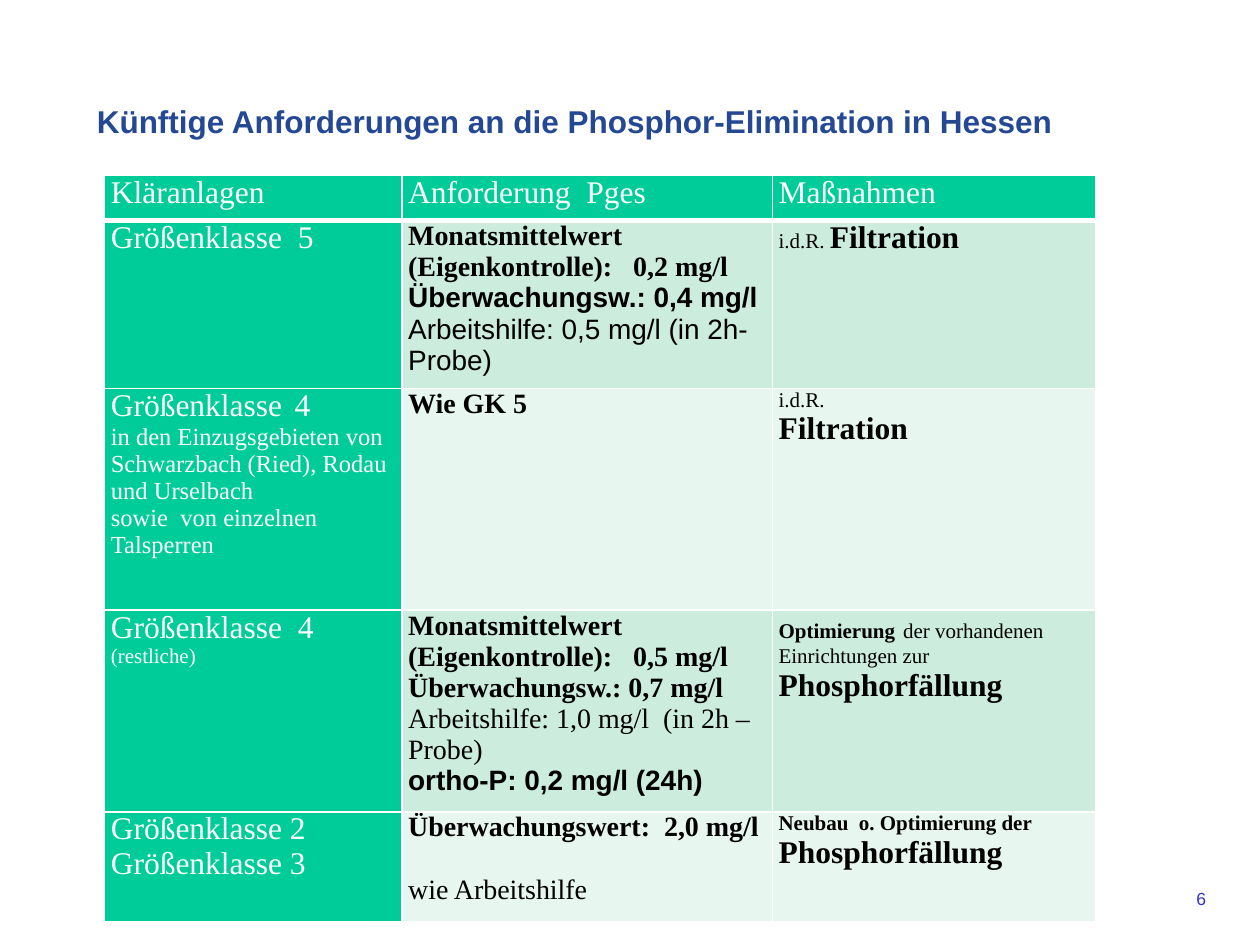
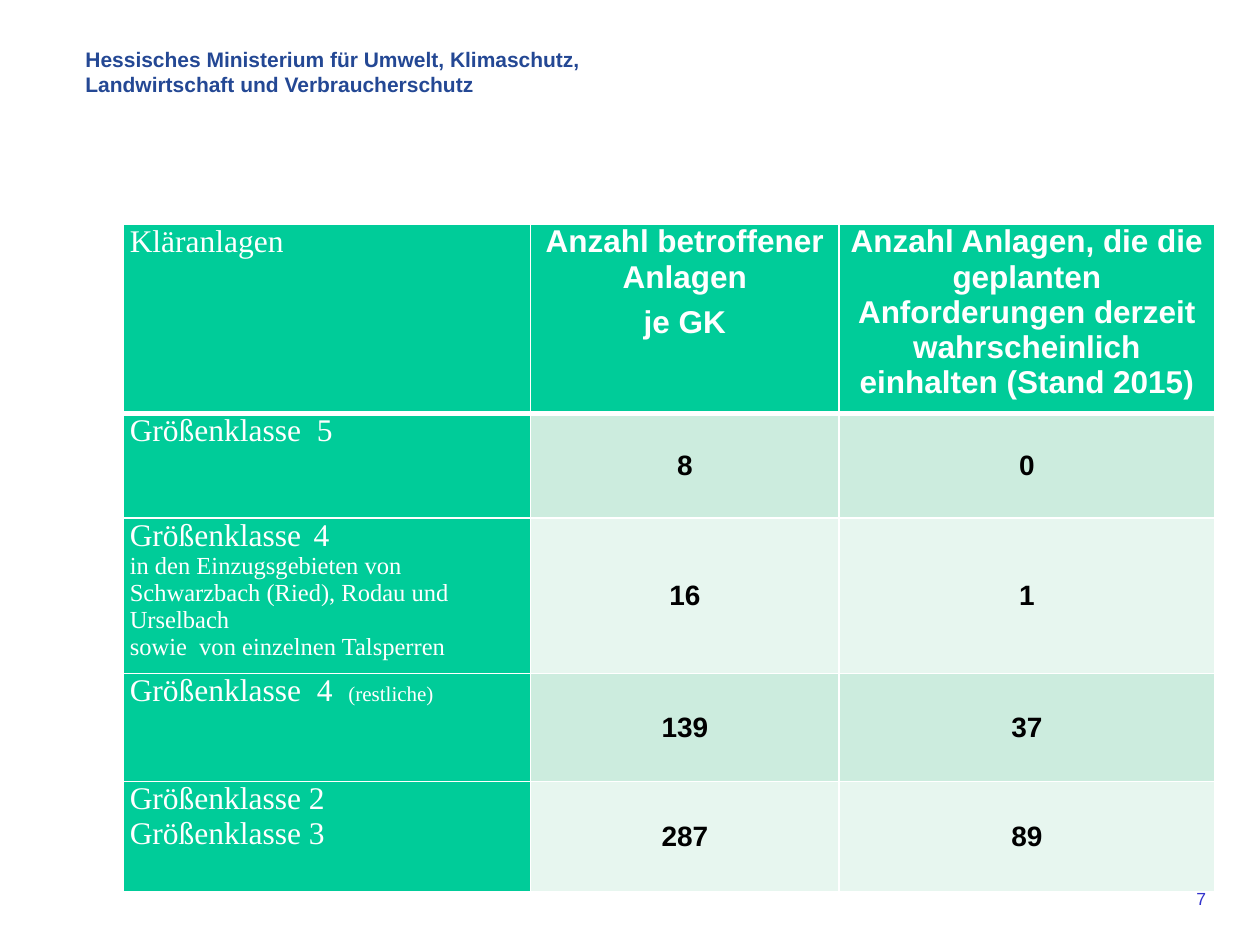
from pptx import Presentation
from pptx.dml.color import RGBColor
from pptx.enum.text import MSO_ANCHOR, PP_ALIGN
from pptx.oxml import parse_xml
from pptx.oxml.ns import nsdecls
from pptx.util import Inches, Pt

LEFT, CENTER, RIGHT = PP_ALIGN.LEFT, PP_ALIGN.CENTER, PP_ALIGN.RIGHT
TOP, MIDDLE = MSO_ANCHOR.TOP, MSO_ANCHOR.MIDDLE
SERIF, SANS = "Times New Roman", "Arial"
COLORS = {
    "title": "244894",
    "number": "3333CC",
    "green": "00CC99",
    "band_dark": "CCECDE",
    "band_light": "E7F6EF",
    "white": "FFFFFF",
    "black": "000000",
}
STYLES = {
    "label": (18, SERIF, False),
    "sublabel": (14, SERIF, False),
    "small": (12, SERIF, False),
    "small_bold": (12, SERIF, True),
    "measure": (18, SERIF, True),
    "value": (16, SERIF, True),
    "value_plain": (16, SERIF, False),
    "sans": (16, SANS, True),
    "sans_plain": (16, SANS, False),
    "sans_head": (18, SANS, True),
    "title": (18, SANS, True),
    "ministry": (12, SANS, True),
    "number": (10, SANS, False),
}


def write(frame, paragraphs, color, align=LEFT, gap=0):
    for index, runs in enumerate(paragraphs):
        paragraph = frame.add_paragraph() if index else frame.paragraphs[0]
        paragraph.alignment = align
        if index and gap:
            paragraph.space_before = Pt(gap)
        for text, style in runs:
            run = paragraph.add_run()
            run.text = text
            size, run.font.name, run.font.bold = STYLES[style]
            run.font.size = Pt(size)
            run.font.color.rgb = RGBColor.from_string(COLORS[color])


def add_text(slide, box, paragraphs, color, align=LEFT):
    frame = slide.shapes.add_textbox(*map(Inches, box)).text_frame
    frame.word_wrap = True
    write(frame, paragraphs, color, align)


plant_classes = [
    [[("Kläranlagen", "label")]],
    [[("Größenklasse  5", "label")]],
    [
        [("Größenklasse", "label"), ("  ", "sublabel"), ("4", "label")],
        [("in den Einzugsgebieten von Schwarzbach (Ried), Rodau und Urselbach", "sublabel")],
        [("sowie  von einzelnen Talsperren", "sublabel")],
    ],
    [[("Größenklasse  4  ", "label"), ("(restliche)", "small")]],
    [[("Größenklasse 2", "label")], [("Größenklasse 3", "label")]],
]
requirements = [
    [[("Anforderung  Pges", "label")]],
    [
        [("Monatsmittelwert  (Eigenkontrolle):   0,2 mg/l", "value")],
        [("Überwachungsw.: 0,4 mg/l  ", "sans"),
         ("Arbeitshilfe: 0,5 mg/l (in 2h- Probe)", "sans_plain")],
    ],
    [[("Wie GK 5", "value")]],
    [
        [("Monatsmittelwert  (Eigenkontrolle):   0,5 mg/l", "value")],
        [("Überwachungsw.: 0,7 mg/l", "value")],
        [("Arbeitshilfe: 1,0 mg/l  (in 2h – Probe)", "value_plain")],
        [("ortho-P: 0,2 mg/l (24h)", "sans")],
    ],
    [[("Überwachungswert:  2,0 mg/l", "value")], [("wie Arbeitshilfe", "value_plain")]],
]
measures = [
    [[("Maßnahmen", "label")]],
    [[("i.d.R. ", "small"), ("Filtration", "measure")]],
    [[("i.d.R.", "small")], [("Filtration", "measure")]],
    [[("Optimierung", "small_bold"), (" ", "label"),
      ("der vorhandenen Einrichtungen zur ", "small"), ("Phosphorfällung", "measure")]],
    [[("Neubau  o. Optimierung der ", "small_bold"), ("Phosphorfällung", "measure")]],
]
affected = [[[("Anzahl betroffener Anlagen", "sans_head")], [("je GK", "sans_head")]]]
affected += [[[(count, "sans")]] for count in ("8", "16", "139", "287")]
compliant = [[[("Anzahl Anlagen, die die geplanten Anforderungen derzeit "
                "wahrscheinlich einhalten (Stand 2015)", "sans_head")]]]
compliant += [[[(count, "sans")]] for count in ("0", "1", "37", "89")]

pages = [
    {
        "number": "6",
        "heading_box": (0.67, 0.76, 8.51, 1.02),
        "heading": [[("Künftige Anforderungen an die Phosphor-Elimination in Hessen", "title")]],
        "origin": (0.83, 1.39),
        "widths": (2.36, 2.94, 2.57),
        "heights": (0.36, 1.24, 1.76, 1.48, 0.87),
        "columns": (plant_classes, requirements, measures),
        "data_align": LEFT,
        "data_anchor": TOP,
        "gaps": {(4, 1): 18},
    },
    {
        "number": "7",
        "heading_box": (0.58, 0.32, 4.26, 0.5),
        "heading": [
            [("Hessisches Ministerium für Umwelt, Klimaschutz,", "ministry")],
            [("Landwirtschaft und Verbraucherschutz", "ministry")],
        ],
        "origin": (0.98, 1.78),
        "widths": (3.23, 2.45, 2.98),
        "heights": (1.4, 0.83, 1.22, 0.86, 0.87),
        "columns": (plant_classes, affected, compliant),
        "data_align": CENTER,
        "data_anchor": MIDDLE,
        "gaps": {(0, 1): 6},
    },
]

prs = Presentation()
prs.slide_width, prs.slide_height = Inches(10), Inches(7.5)

for page in pages:
    slide = prs.slides.add_slide(prs.slide_layouts[6])
    add_text(slide, (7.17, 7, 2.5, 0.33), [[(page["number"], "number")]], "number", RIGHT)
    add_text(slide, page["heading_box"], page["heading"], "title")

    widths, heights = page["widths"], page["heights"]
    extent = (*page["origin"], sum(widths), sum(heights))
    table = slide.shapes.add_table(len(heights), len(widths), *map(Inches, extent)).table
    for row, height in zip(table.rows, heights):
        row.height = Inches(height)
    for c, (width, entries) in enumerate(zip(widths, page["columns"])):
        table.columns[c].width = Inches(width)
        for r, paragraphs in enumerate(entries):
            cell = table.cell(r, c)
            cell.margin_left = cell.margin_right = Inches(0.05)
            cell.margin_top = cell.margin_bottom = 0
            properties = cell._tc.get_or_add_tcPr()
            for side in "LRTB":
                weight = Pt(3 if r == 0 and side == "B" else 1)
                properties.append(parse_xml(
                    f'<a:ln{side} {nsdecls("a")} w="{weight}"><a:solidFill>'
                    f'<a:srgbClr val="{COLORS["white"]}"/></a:solidFill></a:ln{side}>'))
            is_label = r == 0 or c == 0
            band = "band_dark" if r % 2 else "band_light"
            cell.fill.solid()
            cell.fill.fore_color.rgb = RGBColor.from_string(COLORS["green" if is_label else band])
            cell.vertical_anchor = TOP if is_label else page["data_anchor"]
            write(cell.text_frame, paragraphs, "white" if is_label else "black",
                  page["data_align"] if c else LEFT, page["gaps"].get((r, c), 0))

prs.save("out.pptx")
